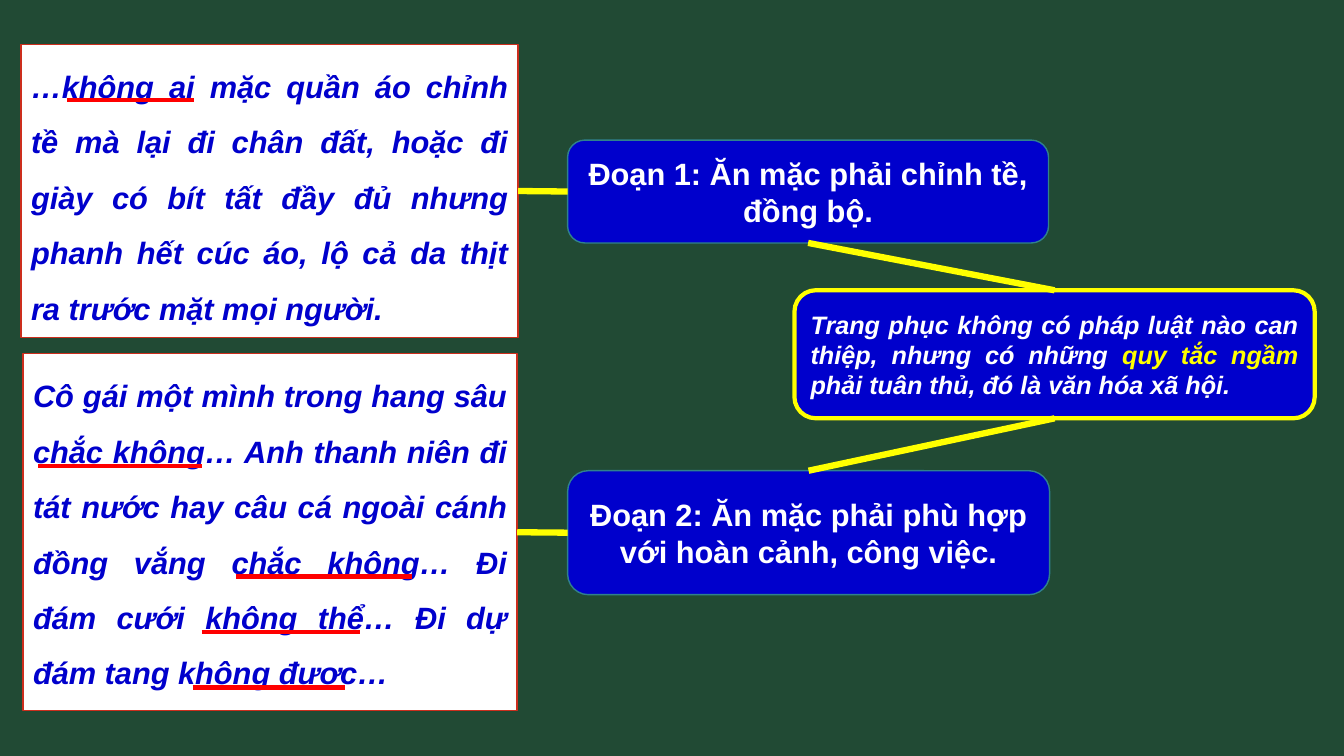
from lxml.etree import SubElement
from pptx import Presentation
from pptx.dml.color import RGBColor
from pptx.enum.shapes import MSO_CONNECTOR as Connector, MSO_SHAPE as Shape
from pptx.enum.text import MSO_ANCHOR as Anchor, PP_ALIGN as Align
from pptx.oxml.ns import qn
from pptx.util import Inches, Pt

COLORS = {
    "board": "214A34", "white": "FFFFFF", "blue": "0000CC", "red": "FF0000",
    "brick": "CC2E1D", "teal": "30818C", "yellow": "FFFF00",
}
TOP, LEFT, BOTTOM, RIGHT = range(4)
QUOTES = [
    ((0.21, 0.44, 4.93, 2.91),
     "…không ai mặc quần áo chỉnh tề mà lại đi chân đất, hoặc đi giày có bít tất "
     "đầy đủ nhưng phanh hết cúc áo, lộ cả da thịt ra trước mặt mọi người."),
    ((0.23, 3.51, 4.9, 3.54),
     "Cô gái một mình trong hang sâu chắc không… Anh thanh niên đi tát nước hay "
     "câu cá ngoài cánh đồng vắng chắc không… Đi đám cưới không thể… Đi dự "
     "đám tang không được…"),
]
POINTS = [
    ((5.63, 1.39, 4.77, 1.02), "Đoạn 1: Ăn mặc phải chỉnh tề, đồng bộ."),
    ((5.63, 4.67, 4.78, 1.23), "Đoạn 2: Ăn mặc phải phù hợp với hoàn cảnh, công việc."),
]
LESSON = [
    ("Trang phục không có pháp luật nào can thiệp, nhưng có những ", "white"),
    ("quy tắc ngầm ", "yellow"),
    ("phải tuân thủ, đó là văn hóa xã hội.", "white"),
]
UNDERLINES = [(0.66, 1.92, 0.99), (0.38, 2, 4.62), (2.34, 4.09, 5.72),
              (2, 3.57, 6.27), (1.91, 3.42, 6.82)]


def color(name):
    """Return the named colour."""
    return RGBColor.from_string(COLORS[name])


def add_box(page, kind, place, fill, edge, spans, size, align,
            weight=1, anchor=Anchor.MIDDLE, italic=False):
    """Add a filled shape holding one bold paragraph of coloured spans."""
    box = page.shapes.add_shape(kind, *map(Inches, place))
    box.shadow.inherit = False
    box.fill.solid()
    box.fill.fore_color.rgb = color(fill)
    box.line.color.rgb = color(edge)
    box.line.width = Pt(weight)
    frame = box.text_frame
    frame.word_wrap = True
    frame.vertical_anchor = anchor
    para = frame.paragraphs[0]
    para.alignment = align
    para.font.name = "Arial"
    para.font.size = Pt(size)
    para.font.bold = True
    para.font.italic = italic
    for text, ink in spans:
        span = para.add_run()
        span.text = text
        span.font.color.rgb = color(ink)
    return box


def add_quote(page, place, text):
    """Add a white box with a widely spaced quotation."""
    box = add_box(page, Shape.RECTANGLE, place, "white", "brick", [(text, "blue")],
                  22, Align.JUSTIFY, anchor=Anchor.TOP, italic=True)
    para = box.text_frame.paragraphs[0]
    para.line_spacing = 1.5
    para.space_before = Pt(10)
    return box


def add_point(page, place, text):
    """Add a rounded box that names the point of a passage."""
    return add_box(page, Shape.ROUNDED_RECTANGLE, place, "blue", "teal",
                   [(text, "white")], 22, Align.CENTER)


def add_line(page, ends, ink, weight):
    """Add a straight line without shadow."""
    line = page.shapes.add_connector(Connector.STRAIGHT, *map(Inches, ends))
    line.line.color.rgb = color(ink)
    line.line.width = Pt(weight)
    SubElement(line._element.spPr, qn("a:effectLst"))
    return line


def add_link(page, start, start_site, end, end_site):
    """Join two boxes with a yellow line."""
    link = add_line(page, (0, 0, 0, 0), "yellow", 4.5)
    link.begin_connect(start, start_site)
    link.end_connect(end, end_site)


def main():
    """Build the slide and save it."""
    deck = Presentation()
    deck.slide_width, deck.slide_height = Inches(13.33), Inches(7.5)
    page = deck.slides.add_slide(deck.slide_layouts[6])
    page.background.fill.solid()
    page.background.fill.fore_color.rgb = color("board")

    quotes = [add_quote(page, *quote) for quote in QUOTES]
    points = [add_point(page, *point) for point in POINTS]
    lesson = add_box(page, Shape.ROUNDED_RECTANGLE, (7.88, 2.88, 5.16, 1.27), "blue",
                     "yellow", LESSON, 18, Align.JUSTIFY, weight=3, italic=True)
    for left, right, y in UNDERLINES:
        add_line(page, (left, y, right, y), "red", 3)
    for quote, point in zip(quotes, points):
        add_link(page, quote, RIGHT, point, LEFT)
    add_link(page, points[0], BOTTOM, lesson, TOP)
    add_link(page, lesson, BOTTOM, points[1], TOP)
    deck.save("out.pptx")


if __name__ == "__main__":
    main()
